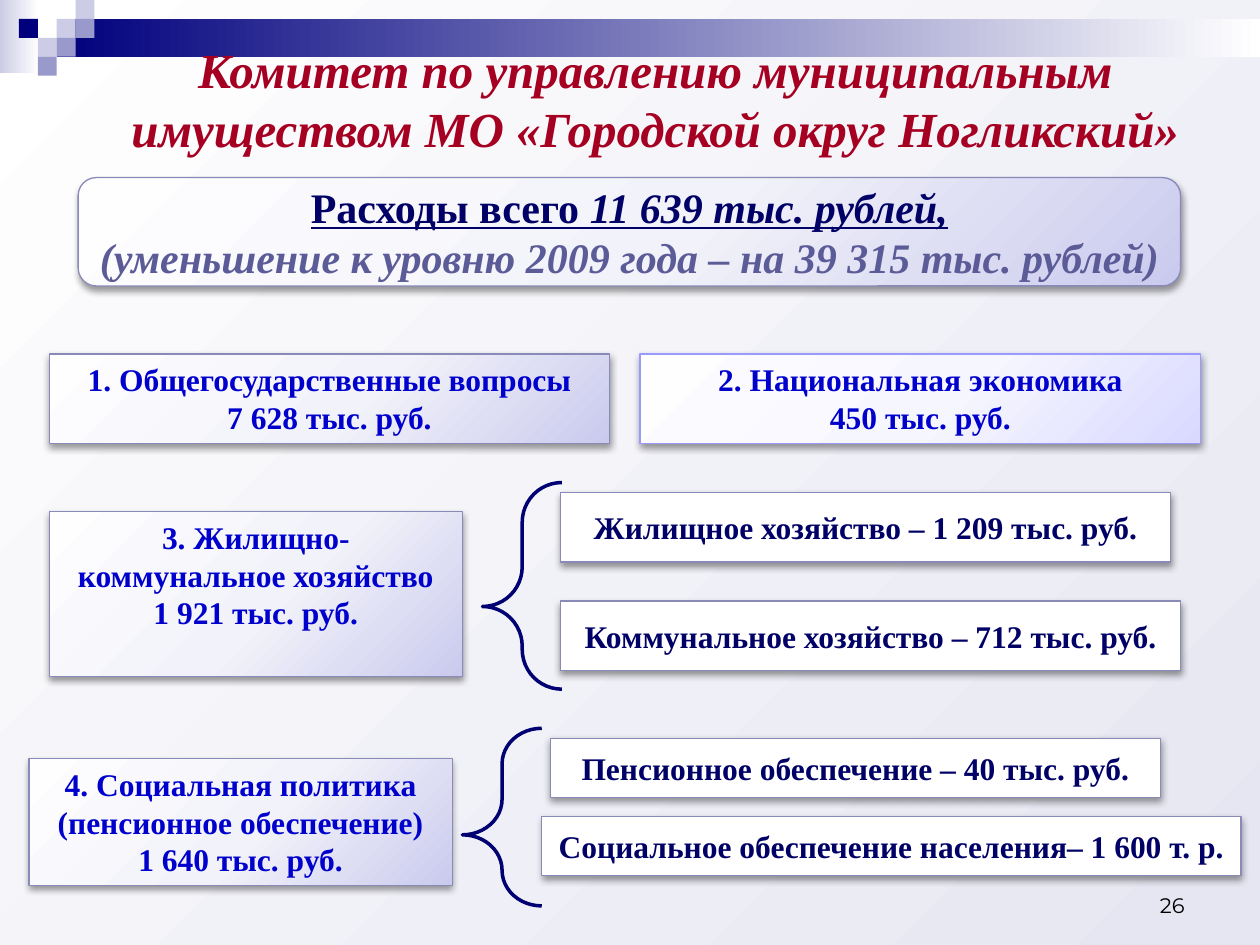
from lxml import etree
from pptx import Presentation
from pptx.dml.color import RGBColor
from pptx.enum.shapes import MSO_SHAPE as SHAPE
from pptx.enum.text import MSO_ANCHOR as ANCHOR, PP_ALIGN as ALIGN
from pptx.oxml import parse_xml
from pptx.oxml.ns import nsdecls, qn
from pptx.util import Inches, Pt

SERIF = "Times New Roman"
LAVENDER = ["FEFEFF", "F2F2FA", "CACAEE"]
LILAC = ["FEFEFF", "F6F6FF", "D9D9FF"]
BLUE, NAVY, EDGE = "0000CC", "000066", "8A8AB9"
SHADOW = f"""<a:effectLst {nsdecls('a')}>
  <a:outerShdw blurRad="52000" dist="25400" dir="5400000" rotWithShape="0">
    <a:srgbClr val="000000"><a:alpha val="40000"/></a:srgbClr>
  </a:outerShdw></a:effectLst>"""


def paint(fill, colors, angle=0):
    """One colour is solid, two run along the angle, three spread from the top left corner."""
    if len(colors) == 1:
        fill.solid()
        fill.fore_color.rgb = RGBColor.from_string(colors[0])
        return
    fill.gradient()
    fill.gradient_angle = -angle % 360
    for stop, color in zip(fill.gradient_stops, colors[::len(colors) - 1]):
        stop.color.rgb = RGBColor.from_string(color)
    first, last = fill.gradient_stops
    first.position, last.position = 0, 1
    if len(colors) == 3:
        stops = fill._fill._gradFill.find(qn("a:gsLst"))
        stops.insert(1, parse_xml(
            f'<a:gs {nsdecls("a")} pos="55000"><a:srgbClr val="{colors[1]}"/></a:gs>'))
        line = stops.getnext()
        line.getparent().replace(line, parse_xml(
            f'<a:path {nsdecls("a")} path="circle">'
            '<a:fillToRect l="-40000" t="-90000" r="140000" b="190000"/></a:path>'))


def write(box, paragraphs, anchor, align=ALIGN.CENTER, wrap=True):
    """Each paragraph is a list of runs: text, size, colour, font, styles (b, i, u)."""
    frame = box.text_frame
    frame.word_wrap = wrap
    frame.vertical_anchor = anchor
    for index, runs in enumerate(paragraphs):
        para = frame.paragraphs[0] if index == 0 else frame.add_paragraph()
        para.alignment = align
        for text, size, color, font, styles in runs:
            span = para.add_run()
            span.text = text
            span.font.size = Pt(size)
            span.font.name = font
            span.font.bold = "b" in styles
            span.font.italic = "i" in styles
            span.font.underline = "u" in styles
            span.font.color.rgb = RGBColor.from_string(color)


deck = Presentation()
deck.slide_width, deck.slide_height = Inches(10), Inches(7.5)
page = deck.slides.add_slide(deck.slide_layouts[6])
shapes = page.shapes
paint(page.background.fill, ["FFFFFF", "E6E6F2"], 45)

# Header band and its mosaic of squares
side = 0.15
header = [
    (0, 0, 0.31, 0.58, ["CCCCE6", "FFFFFF"]),
    (0.45, 0.15, 9.55, 0.3, ["00007D", "FFFFFF"]),
]
for column, row, color in [
    (3, 1, "CCCCE6"), (4, 0, "CCCCE6"), (4, 1, "9999CC"), (2, 2, "CCCCE6"),
    (1, 1, "00007D"), (3, 2, "9999CC"), (2, 3, "9999CC"),
]:
    header.append((column * side, row * side, side, side, [color]))
for left, top, width, height, colors in header:
    tile = shapes.add_shape(SHAPE.RECTANGLE, *map(Inches, (left, top, width, height)))
    tile.shadow.inherit = False
    paint(tile.fill, colors)
    tile.line.fill.background()

title = shapes.add_textbox(*map(Inches, (0.55, 0.31, 9.3, 0.94)))
write(title, [[("Комитет по управлению муниципальным имуществом МО «Городской округ Ногликский»",
                28, "A50021", SERIF, "bi")]], ANCHOR.MIDDLE)

# Total, spending sections and their items
total = [
    [("Расходы всего ", 24, NAVY, SERIF, "bu"), ("11 639 тыс. рублей,", 24, NAVY, SERIF, "biu")],
    [("(уменьшение к уровню 2009 года – на 39 315 тыс. рублей)", 24, "5B5B98", SERIF, "bi")],
]
panels = [((0.62, 1.41, 8.75, 0.86), SHAPE.ROUNDED_RECTANGLE, LAVENDER, EDGE, total, ANCHOR.MIDDLE)]

sections = [
    ((0.39, 2.81, 4.45, 0.71), LAVENDER, EDGE,
     ["1. Общегосударственные вопросы", "7 628 тыс. руб."]),
    ((5.08, 2.81, 4.45, 0.71), LILAC, "9999FF",
     ["2. Национальная экономика", "450 тыс. руб."]),
    ((0.39, 4.06, 3.28, 1.31), LAVENDER, EDGE,
     ["3. Жилищно-коммунальное хозяйство", "1 921 тыс. руб."]),
    ((0.23, 6.02, 3.36, 1.01), LAVENDER, EDGE,
     ["4. Социальная политика", "(пенсионное обеспечение)", "1 640 тыс. руб."]),
]
for place, colors, edge, lines in sections:
    paragraphs = [[(line, 18, BLUE, SERIF, "b")] for line in lines]
    panels.append((place, SHAPE.RECTANGLE, colors, edge, paragraphs, ANCHOR.TOP))

items = [
    ((4.45, 3.91, 4.84, 0.55), "Жилищное хозяйство – 1 209 тыс. руб."),
    ((4.45, 4.77, 4.92, 0.55), "Коммунальное хозяйство – 712 тыс. руб."),
    ((4.37, 5.86, 4.84, 0.47), "Пенсионное обеспечение – 40 тыс. руб."),
    ((4.3, 6.48, 5.55, 0.47), "Социальное обеспечение населения– 1 600 т. р."),
]
for place, text in items:
    panels.append((place, SHAPE.RECTANGLE, ["FFFFFF"], EDGE,
                   [[(text, 18, NAVY, SERIF, "b")]], ANCHOR.MIDDLE))

for place, kind, colors, edge, paragraphs, anchor in panels:
    panel = shapes.add_shape(kind, *map(Inches, place))
    paint(panel.fill, colors)
    panel.line.color.rgb = RGBColor.from_string(edge)
    panel.line.width = Pt(0.75)
    panel._element.spPr.append(etree.fromstring(SHADOW))
    write(panel, paragraphs, anchor, wrap=anchor == ANCHOR.TOP)

# Braces from sections 3 and 4 to their items
for place in [(3.83, 3.83, 0.63, 1.64), (3.67, 5.78, 0.63, 1.41)]:
    brace = shapes.add_shape(SHAPE.LEFT_BRACE, *map(Inches, place))
    brace.shadow.inherit = False
    brace.adjustments[0], brace.adjustments[1] = 0.5, 0.6
    brace.fill.background()
    brace.line.color.rgb = RGBColor.from_string("000072")
    brace.line.width = Pt(2)

number = shapes.add_textbox(*map(Inches, (7.17, 6.83, 2.33, 0.5)))
write(number, [[("26", 12, "000000", "Montserrat", "")]], ANCHOR.BOTTOM, ALIGN.RIGHT)

deck.save("out.pptx")
